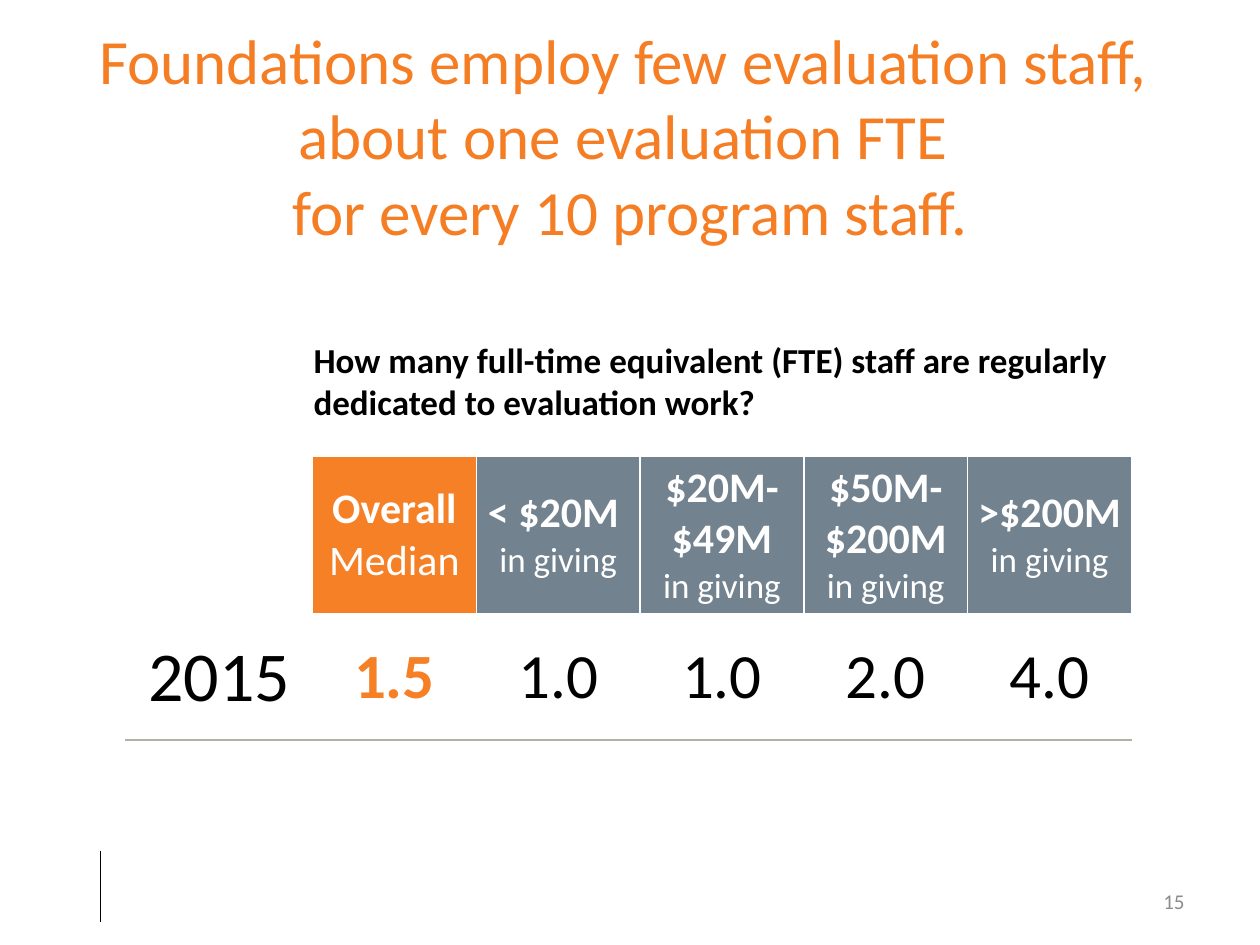
from dataclasses import dataclass

from lxml import etree
from pptx import Presentation, util as u
from pptx.dml.color import RGBColor
from pptx.enum import shapes, text
from pptx.oxml import ns

PX = 9144
FONT = "Calibri"
COLORS = {
    "title": "F57E25",
    "orange": "F58025",
    "slate": "72828E",
    "white": "FFFFFF",
    "black": "000000",
    "rule": "B3B0A5",
    "number": "8C8C8C",
}


@dataclass(frozen=True)
class Span:
    wording: str
    size: int
    color: str
    bold: bool = False


@dataclass(frozen=True)
class Entry:
    paragraphs: tuple[tuple[Span, ...], ...] = ()
    fill: str | None = None
    bottom: str = "white"


def px(value: int) -> u.Emu:
    return u.Emu(value * PX)


def rgb(name: str) -> RGBColor:
    return RGBColor.from_string(COLORS[name])


def style(font, span: Span) -> None:
    font.name = FONT
    font.size = u.Pt(span.size)
    font.bold = span.bold
    font.color.rgb = rgb(span.color)


def write_box(box, span: Span, align, anchor) -> None:
    frame = box.text_frame
    frame.word_wrap = True
    frame.auto_size = text.MSO_AUTO_SIZE.NONE
    frame.vertical_anchor = anchor
    frame.text = span.wording
    for para in frame.paragraphs:
        para.alignment = align
        for run in para.runs:
            style(run.font, span)


def draw_border(cell, side: str, color: str) -> None:
    line = etree.SubElement(
        cell._tc.get_or_add_tcPr(), ns.qn(f"a:ln{side}"), w=str(u.Pt(1))
    )
    solid = etree.SubElement(line, ns.qn("a:solidFill"))
    etree.SubElement(solid, ns.qn("a:srgbClr"), val=COLORS[color])


def write_cell(cell, entry: Entry) -> None:
    cell.margin_left = cell.margin_right = px(5)
    cell.margin_top = cell.margin_bottom = px(5)
    cell.vertical_anchor = text.MSO_ANCHOR.MIDDLE
    for side in "LRT":
        draw_border(cell, side, "white")
    draw_border(cell, "B", entry.bottom)
    if entry.fill:
        cell.fill.solid()
        cell.fill.fore_color.rgb = rgb(entry.fill)
    else:
        cell.fill.background()
    frame = cell.text_frame
    for index, spans in enumerate(entry.paragraphs):
        para = frame.add_paragraph() if index else frame.paragraphs[0]
        para.alignment = text.PP_ALIGN.CENTER
        for span in spans:
            run = para.add_run()
            run.text = span.wording
            style(run.font, span)


def giving_header(amount: str) -> Entry:
    return Entry(
        ((Span(amount, 24, "white", True),), (Span("in giving", 20, "white"),)),
        "slate",
    )


def figure(wording: str, size: int = 36, color: str = "black", bold: bool = False) -> Entry:
    return Entry(((Span(wording, size, color, bold),),), bottom="rule")


def draw_table(page, rows: list[list[Entry]]) -> None:
    widths = [148] + [130] * 5
    heights = [116, 100]
    frame = page.shapes.add_table(
        len(rows), len(widths), px(100), px(362), px(sum(widths)), px(sum(heights))
    )
    table = frame.table
    table.first_row = False
    table.horz_banding = False
    for column, width in zip(table.columns, widths):
        column.width = px(width)
    for row, height, entries in zip(table.rows, heights, rows):
        row.height = px(height)
        for cell, entry in zip(row.cells, entries):
            write_cell(cell, entry)


def draw_rule(page) -> None:
    rule = page.shapes.add_connector(
        shapes.MSO_CONNECTOR.STRAIGHT, px(80), px(675), px(80), px(732)
    )
    rule.line.color.rgb = rgb("black")
    rule.line.width = u.Pt(0.5)
    etree.SubElement(rule._element.spPr, ns.qn("a:effectLst"))


def main() -> None:
    deck = Presentation()
    deck.slide_width, deck.slide_height = px(1000), px(750)
    page = deck.slides.add_slide(deck.slide_layouts[5])
    draw_rule(page)

    title = page.shapes.title
    title.left, title.top, title.width, title.height = px(0), px(18), px(1000), px(178)
    heading = (
        "Foundations employ few evaluation staff, \v"
        "about one evaluation FTE \v"
        "for every 10 program staff."
    )
    write_box(title, Span(heading, 36, "title"), text.PP_ALIGN.CENTER, text.MSO_ANCHOR.MIDDLE)

    overall = Entry(
        ((Span("Overall", 24, "white", True), Span(" Median", 24, "white")),), "orange"
    )
    amounts = ["< $20M ", "$20M-$49M", "$50M-$200M", ">$200M"]
    medians = ["1.0", "1.0", "2.0", "4.0"]
    draw_table(page, [
        [Entry(fill="white"), overall, *map(giving_header, amounts)],
        [figure("2015", 40), figure("1.5", color="orange", bold=True), *map(figure, medians)],
    ])

    number = page.shapes.add_textbox(px(717), px(695), px(233), px(40))
    write_box(number, Span("15", 12, "number"), text.PP_ALIGN.RIGHT, text.MSO_ANCHOR.MIDDLE)

    question = page.shapes.add_textbox(px(239), px(264), px(667), px(77))
    wording = "How many full-time equivalent (FTE) staff are regularly dedicated to evaluation work?"
    write_box(
        question, Span(wording, 20, "black", True), text.PP_ALIGN.LEFT, text.MSO_ANCHOR.TOP
    )
    deck.save("out.pptx")


if __name__ == "__main__":
    main()
